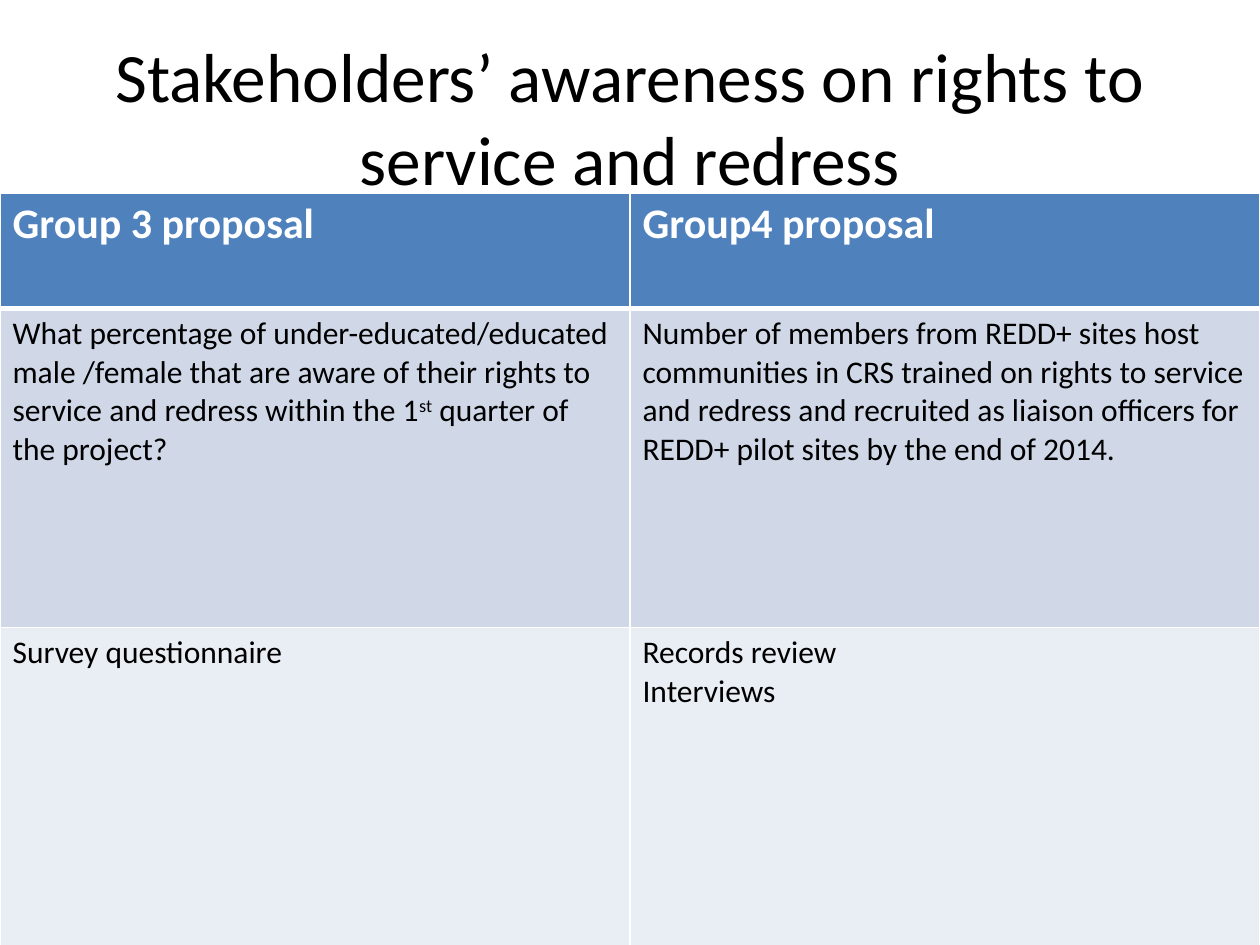
from lxml.etree import SubElement
from pptx import Presentation
from pptx.dml.color import RGBColor
from pptx.enum.text import MSO_ANCHOR, PP_ALIGN
from pptx.oxml.ns import qn
from pptx.util import Inches, Pt

TITLE = "Stakeholders’ awareness on rights to service and redress"
ROWS = [
    ("header", 0.92, [[["Group 3 proposal"]], [["Group4 proposal"]]]),
    ("question", 2.53, [
        [["What percentage of under-educated/educated male /female that are aware "
          "of their rights to service and redress within the 1",
          ("st", "30000"), " quarter of the project?"]],
        [["Number of members from REDD+ sites host communities in CRS trained on "
          "rights to service and redress and recruited as liaison officers for "
          "REDD+ pilot sites by the end of 2014."]],
    ]),
    ("method", 2.53, [
        [["Survey questionnaire"]],
        [["Records review"], ["Interviews"]],
    ]),
]
THEME = {
    "font": "Calibri",
    "border": "FFFFFF",
    "title": {"size": 39.6, "color": "000000", "bold": False},
    "header": {"size": 24, "color": "FFFFFF", "bold": True, "fill": "4F81BD"},
    "question": {"size": 18, "color": "000000", "bold": False, "fill": "D0D8E8"},
    "method": {"size": 18, "color": "000000", "bold": False, "fill": "E9EDF4"},
}
SLIDE_WIDTH, SLIDE_HEIGHT = 10, 7.5
TABLE_TOP = 1.53


def add_span(para, text, style, baseline=None):
    span = para.add_run()
    span.text = text
    formats = {"name": THEME["font"], "size": Pt(style["size"]), "bold": style["bold"]}
    for name, value in formats.items():
        setattr(span.font, name, value)
    span.font.color.rgb = RGBColor.from_string(style["color"])
    if baseline:
        span._r.get_or_add_rPr().set("baseline", baseline)


def add_borders(cell, widths):
    properties = cell._tc.get_or_add_tcPr()
    for index, (side, width) in enumerate(widths.items()):
        line = SubElement(properties, qn(f"a:ln{side}"), w=str(Pt(width)))
        fill = SubElement(line, qn("a:solidFill"))
        SubElement(fill, qn("a:srgbClr"), val=THEME["border"])
        properties.insert(index, line)


def add_title(slide):
    box = slide.shapes.add_textbox(Inches(0.5), Inches(0.3), Inches(9), Inches(1.25))
    frame = box.text_frame
    for name, value in {"word_wrap": True, "vertical_anchor": MSO_ANCHOR.MIDDLE}.items():
        setattr(frame, name, value)
    para = frame.paragraphs[0]
    para.alignment = PP_ALIGN.CENTER
    add_span(para, TITLE, THEME["title"])


def fill_cell(cell, paragraphs, style):
    cell.fill.solid()
    cell.fill.fore_color.rgb = RGBColor.from_string(style["fill"])
    frame = cell.text_frame
    for index, parts in enumerate(paragraphs):
        para = frame.add_paragraph() if index else frame.paragraphs[0]
        for part in parts:
            text, baseline = part if isinstance(part, tuple) else (part, None)
            add_span(para, text, style, baseline)


def add_proposals(slide):
    columns = len(ROWS[0][2])
    table = slide.shapes.add_table(
        len(ROWS), columns, Inches(0), Inches(TABLE_TOP),
        Inches(SLIDE_WIDTH), Inches(SLIDE_HEIGHT - TABLE_TOP)).table
    for column in table.columns:
        column.width = Inches(SLIDE_WIDTH / columns)
    for row_index, (kind, height, cells) in enumerate(ROWS):
        table.rows[row_index].height = Inches(height)
        widths = {"L": 1, "R": 1, "T": 3 if row_index == 1 else 1,
                  "B": 3 if row_index == 0 else 1}
        for column_index, paragraphs in enumerate(cells):
            cell = table.cell(row_index, column_index)
            fill_cell(cell, paragraphs, THEME[kind])
            add_borders(cell, widths)


def main():
    deck = Presentation()
    deck.slide_width, deck.slide_height = Inches(SLIDE_WIDTH), Inches(SLIDE_HEIGHT)
    slide = deck.slides.add_slide(deck.slide_layouts[6])
    add_title(slide)
    add_proposals(slide)
    deck.save("out.pptx")


if __name__ == "__main__":
    main()
